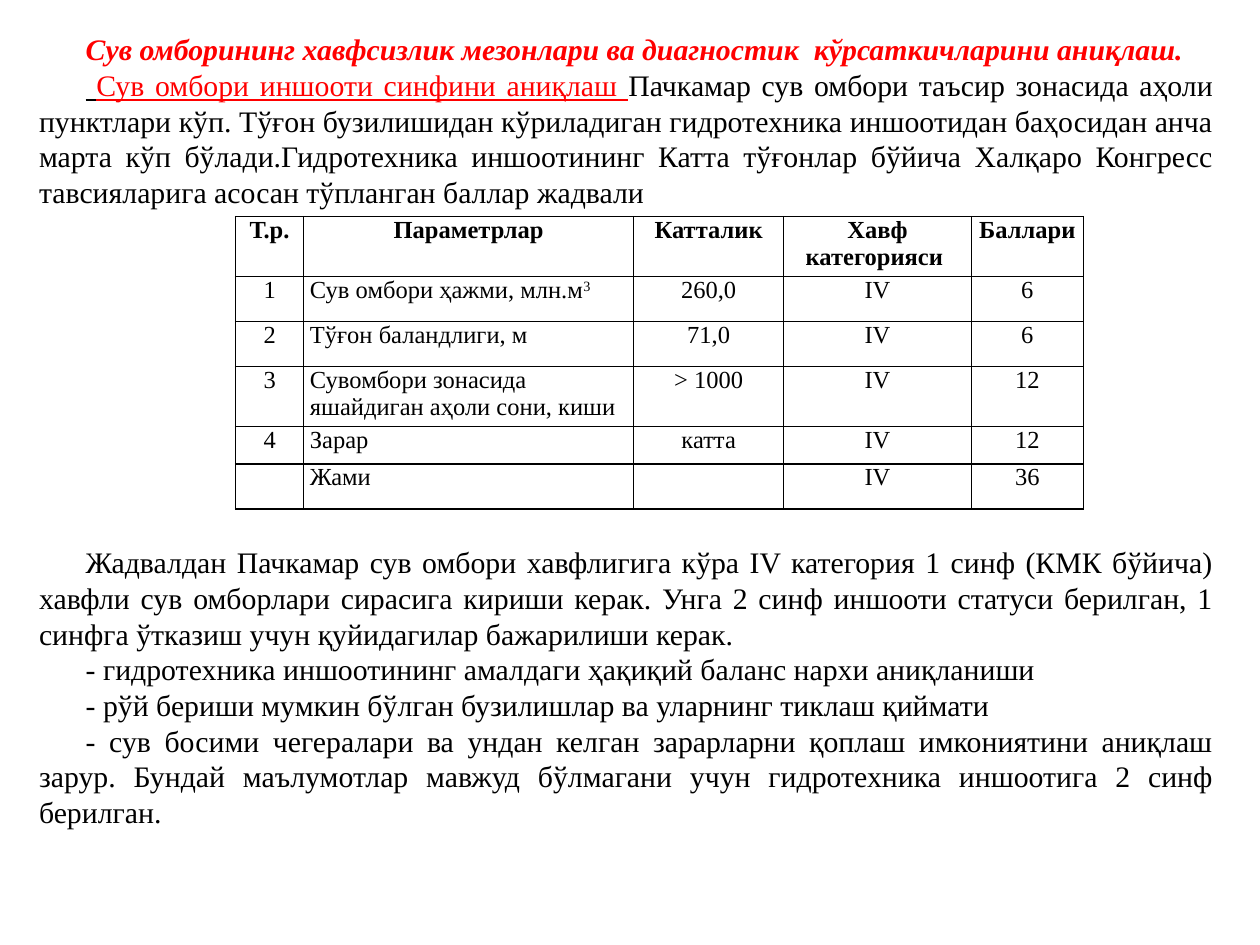
from lxml import etree
from pptx import Presentation
from pptx.dml.color import RGBColor
from pptx.enum.text import MSO_ANCHOR, MSO_AUTO_SIZE, PP_ALIGN
from pptx.oxml.ns import qn
from pptx.util import Inches, Pt

LEFT, CENTER, JUSTIFY = PP_ALIGN.LEFT, PP_ALIGN.CENTER, PP_ALIGN.JUSTIFY
TOP = MSO_ANCHOR.TOP
NO_FIT = MSO_AUTO_SIZE.NONE
TITLE_ONLY = 5
COLORS = {"text": "000000", "accent": "FF0000", "border": "000000"}

HEADING = ("Сув омборининг хавфсизлик мезонлари ва диагностик  "
           "кўрсаткичларини аниқлаш.")
INTRO = [
    (" ", {"bold": True, "underline": True}),
    ("Сув омбори иншооти синфини аниқлаш ", {"color": "accent", "underline": True}),
    ("Пачкамар сув омбори таъсир зонасида аҳоли пунктлари кўп. Тўғон "
     "бузилишидан кўриладиган гидротехника иншоотидан баҳосидан анча марта кўп "
     "бўлади.Гидротехника иншоотининг Катта тўғонлар бўйича Халқаро Конгресс "
     "тавсияларига асосан тўпланган баллар жадвали", {}),
]
CONCLUSIONS = [
    "Жадвалдан Пачкамар сув омбори хавфлигига кўра IV категория 1 синф (КМК "
    "бўйича) хавфли сув омборлари сирасига кириши керак. Унга 2 синф иншооти "
    "статуси берилган, 1 синфга ўтказиш учун қуйидагилар бажарилиши керак.",
    "- гидротехника иншоотининг амалдаги ҳақиқий баланс нархи аниқланиши",
    "- рўй бериши мумкин бўлган бузилишлар ва уларнинг тиклаш қиймати",
    "- сув босими чегералари ва ундан келган зарарларни қоплаш имкониятини "
    "аниқлаш зарур. Бундай маълумотлар мавжуд бўлмагани учун гидротехника "
    "иншоотига 2 синф берилган.",
]
SCORES = [
    ["Т.р.", "Параметрлар", "Катталик", "Хавф категорияси ", "Баллари"],
    ["1", "Сув омбори ҳажми, млн.м^3", "260,0", "IV", "6"],
    ["2", "Тўғон баландлиги, м", "71,0", "IV", "6"],
    ["3", "Сувомбори зонасида яшайдиган аҳоли сони, киши", "> 1000", "IV", "12"],
    ["4", "Зарар", "катта", "IV", "12"],
    ["", "Жами", "", "IV", "36"],
]
COL_WIDTHS = [5.4, 26.2, 11.9, 14.9, 8.9]
ROW_HEIGHTS = [4.76, 3.57, 3.57, 4.76, 2.98, 3.57]


class Deck:
    """Style and current slide; lengths are cells of a 100 x 75 grid."""

    font = "Times New Roman"
    body_size = 17
    table_size = 14
    indent = 3.7
    table_gap = 191

    def __init__(self):
        self.prs = Presentation()
        self.prs.slide_width, self.prs.slide_height = Inches(10), Inches(7.5)
        self.unit = self.prs.slide_width // 100
        self.s = self.prs.slides.add_slide(self.prs.slide_layouts[TITLE_ONLY])

    def grid(self, *lengths):
        return [round(n * self.unit) for n in lengths]

    def run(self, p, text, size, color="text", bold=False, italic=False,
            underline=False, baseline=0):
        r = p.add_run()
        r.text = text
        f = r.font
        f.name, f.size = self.font, Pt(size)
        f.bold, f.italic, f.underline = bold, italic, underline
        f.color.rgb = RGBColor.from_string(COLORS[color])
        if baseline:
            f._element.set("baseline", str(baseline * 1000))

    def frame(self, sp):
        tf = sp.text_frame
        tf.word_wrap, tf.auto_size, tf.vertical_anchor = True, NO_FIT, TOP
        tf.margin_left, tf.margin_right = self.grid(0.7, 0.7)
        tf.margin_top = tf.margin_bottom = 0
        return tf

    def paragraph(self, p, runs, align, before=0):
        p.alignment, p.space_before = align, Pt(before)
        p._p.get_or_add_pPr().set("indent", str(self.grid(self.indent)[0]))
        for text, style in runs:
            self.run(p, text, self.body_size, **style)

    def title(self, text, *box):
        sp = self.s.shapes.title
        sp.left, sp.top, sp.width, sp.height = self.grid(*box)
        style = {"color": "accent", "bold": True, "italic": True}
        self.paragraph(self.frame(sp).paragraphs[0], [(text, style)], LEFT)

    def body(self, intro, conclusions, *box):
        tf = self.frame(self.s.shapes.add_textbox(*self.grid(*box)))
        self.paragraph(tf.paragraphs[0], intro, JUSTIFY)
        for i, text in enumerate(conclusions):
            # The first paragraph below leaves room for the table
            before = 0 if i else self.table_gap
            self.paragraph(tf.add_paragraph(), [(text, {})], JUSTIFY, before)

    def borders(self, cell):
        tc_pr = cell._tc.get_or_add_tcPr()
        for side in ("a:lnL", "a:lnR", "a:lnT", "a:lnB"):
            ln = etree.SubElement(tc_pr, qn(side), w=str(Pt(1)))
            fill = etree.SubElement(ln, qn("a:solidFill"))
            etree.SubElement(fill, qn("a:srgbClr"), val=COLORS["border"])

    def cell(self, cell, text, align, bold):
        cell.margin_left, cell.margin_right = self.grid(0.5, 0.5)
        cell.margin_top = cell.margin_bottom = 0
        self.borders(cell)
        cell.fill.background()
        p = cell.text_frame.paragraphs[0]
        p.alignment = align
        p.font.size = Pt(self.table_size)
        base, _, power = text.partition("^")
        if base:
            self.run(p, base, self.table_size, bold=bold)
        if power:
            self.run(p, power, self.table_size, baseline=30)

    def table(self, rows, widths, heights, left, top):
        box = self.grid(left, top, sum(widths), sum(heights))
        table = self.s.shapes.add_table(len(rows), len(widths), *box).table
        table.first_row = table.horz_banding = False
        for col, width in zip(table.columns, self.grid(*widths)):
            col.width = width
        for row, height in zip(table.rows, self.grid(*heights)):
            row.height = height
        for i, values in enumerate(rows):
            for j, text in enumerate(values):
                align = LEFT if i and j == 1 else CENTER
                self.cell(table.cell(i, j), text, align, bold=i == 0)


def main():
    deck = Deck()
    # Heading
    deck.title(HEADING, 2.4, 2.45, 94.6, 2.8)
    # Introduction and conclusions around the table
    deck.body(INTRO, CONCLUSIONS, 2.4, 5.3, 94.6, 61)
    # Hazard scores
    deck.table(SCORES, COL_WIDTHS, ROW_HEIGHTS, 18.7, 17.2)
    deck.prs.save("out.pptx")


if __name__ == "__main__":
    main()
